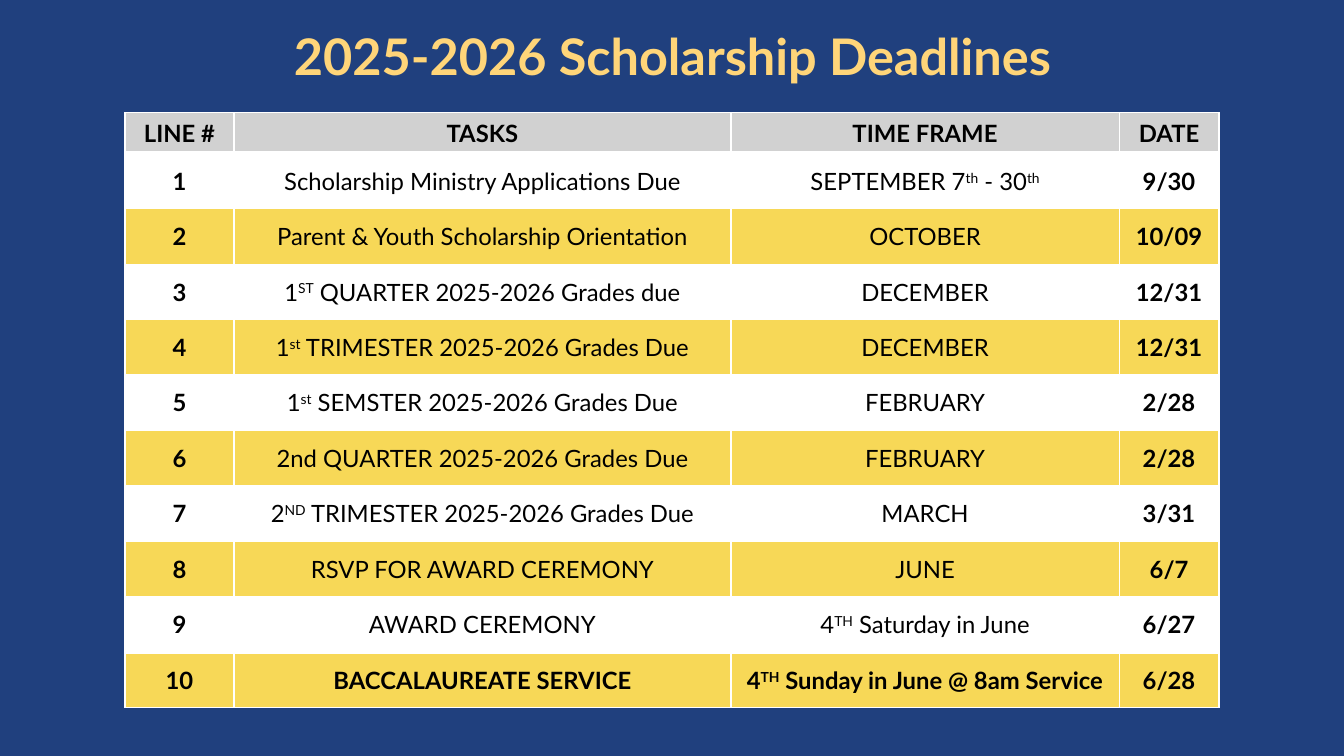
"""Build the 2025-2026 scholarship deadlines slide."""
from lxml import etree
from pptx import Presentation
from pptx.dml.color import RGBColor
from pptx.enum.text import MSO_ANCHOR, PP_ALIGN
from pptx.oxml.ns import qn
from pptx.util import Pt

PX = 9144
NAVY = RGBColor(0x20, 0x40, 0x7E)
GOLD = RGBColor(0xFF, 0xD5, 0x79)
YELLOW = RGBColor(0xF7, 0xD8, 0x57)
GREY = RGBColor(0xD1, 0xD1, 0xD1)
WHITE = RGBColor(0xFF, 0xFF, 0xFF)
BLACK = RGBColor(0x00, 0x00, 0x00)
CENTER = PP_ALIGN.CENTER
MIDDLE = MSO_ANCHOR.MIDDLE
FONT = "Lato"

COLUMN_WIDTHS = [108, 493, 385, 99]
HEADER_HEIGHT, TASK_HEIGHT = 40, 55
DEADLINES = [
    ("LINE #", "TASKS", "TIME FRAME", "DATE"),
    ("1", "Scholarship Ministry Applications Due", "SEPTEMBER 7^th^ - 30^th", "9/30"),
    ("2", "Parent & Youth Scholarship Orientation", "OCTOBER", "10/09"),
    ("3", "1^ST^ QUARTER 2025-2026 Grades due", "DECEMBER", "12/31"),
    ("4", "1^st^ TRIMESTER 2025-2026 Grades Due", "DECEMBER", "12/31"),
    ("5", "1^st^ SEMSTER 2025-2026 Grades Due", "FEBRUARY", "2/28"),
    ("6", "2nd QUARTER 2025-2026 Grades Due", "FEBRUARY", "2/28"),
    ("7", "2^ND^ TRIMESTER 2025-2026 Grades Due", "MARCH", "3/31"),
    ("8", "RSVP FOR AWARD CEREMONY", "JUNE", "6/7"),
    ("9", "AWARD CEREMONY", "4^TH^ Saturday in June", "6/27"),
    ("10", "BACCALAUREATE SERVICE", "4^TH^ Sunday in June @ 8am Service", "6/28"),
]
LAST = len(DEADLINES) - 1


def write_text(paragraph, text, size, color, bold):
    """Fill a centred paragraph; text between carets is superscript."""
    paragraph.alignment = CENTER
    font = paragraph.font
    font.name, font.size, font.bold = FONT, Pt(size), bold
    font.color.rgb = color
    for i, part in enumerate(text.split("^")):
        run = paragraph.add_run()
        run.text = part
        if i % 2:
            run._r.get_or_add_rPr().set("baseline", "30000")


def add_border(cell, side, points):
    """Draw one white side of a cell, ahead of its fill."""
    properties = cell._tc.get_or_add_tcPr()
    line = etree.Element(qn(f"a:ln{side}"), w=str(Pt(points)))
    fill = etree.SubElement(line, qn("a:solidFill"))
    etree.SubElement(fill, qn("a:srgbClr"), val=str(WHITE))
    properties.insert("LRTB".index(side), line)


prs = Presentation()
prs.slide_width, prs.slide_height = 1333 * PX, 750 * PX
slide = prs.slides.add_slide(prs.slide_layouts[6])
slide.background.fill.solid()
slide.background.fill.fore_color.rgb = NAVY

schedule = slide.shapes.add_table(
    len(DEADLINES), len(COLUMN_WIDTHS), 124 * PX, 112 * PX,
    sum(COLUMN_WIDTHS) * PX, (HEADER_HEIGHT + LAST * TASK_HEIGHT) * PX,
).table
schedule.first_row = False
schedule.horz_banding = False
for column, width in zip(schedule.columns, COLUMN_WIDTHS):
    column.width = width * PX

for r, deadline in enumerate(DEADLINES):
    schedule.rows[r].height = (TASK_HEIGHT if r else HEADER_HEIGHT) * PX
    row_color = GREY if r == 0 else WHITE if r % 2 else YELLOW
    for c, text in enumerate(deadline):
        cell = schedule.cell(r, c)
        cell.vertical_anchor = MIDDLE
        cell.margin_left = cell.margin_right = 6 * PX
        cell.margin_top = cell.margin_bottom = 0
        cell.fill.solid()
        cell.fill.fore_color.rgb = row_color
        for side in "LRTB":
            thick = (r, side) in ((0, "B"), (LAST, "T"))
            add_border(cell, side, 3 if thick else 1)
        bold = r in (0, LAST) or c in (0, 3)
        write_text(cell.text_frame.paragraphs[0], text, 17, BLACK, bold)

title = slide.shapes.add_textbox(92 * PX, 34 * PX, 1150 * PX, 50 * PX).text_frame
title.word_wrap = True
title.vertical_anchor = MIDDLE
heading = title.paragraphs[0]
heading.line_spacing = 0.9
write_text(heading, "2025-2026 Scholarship Deadlines", 36, GOLD, True)

prs.save("out.pptx")
